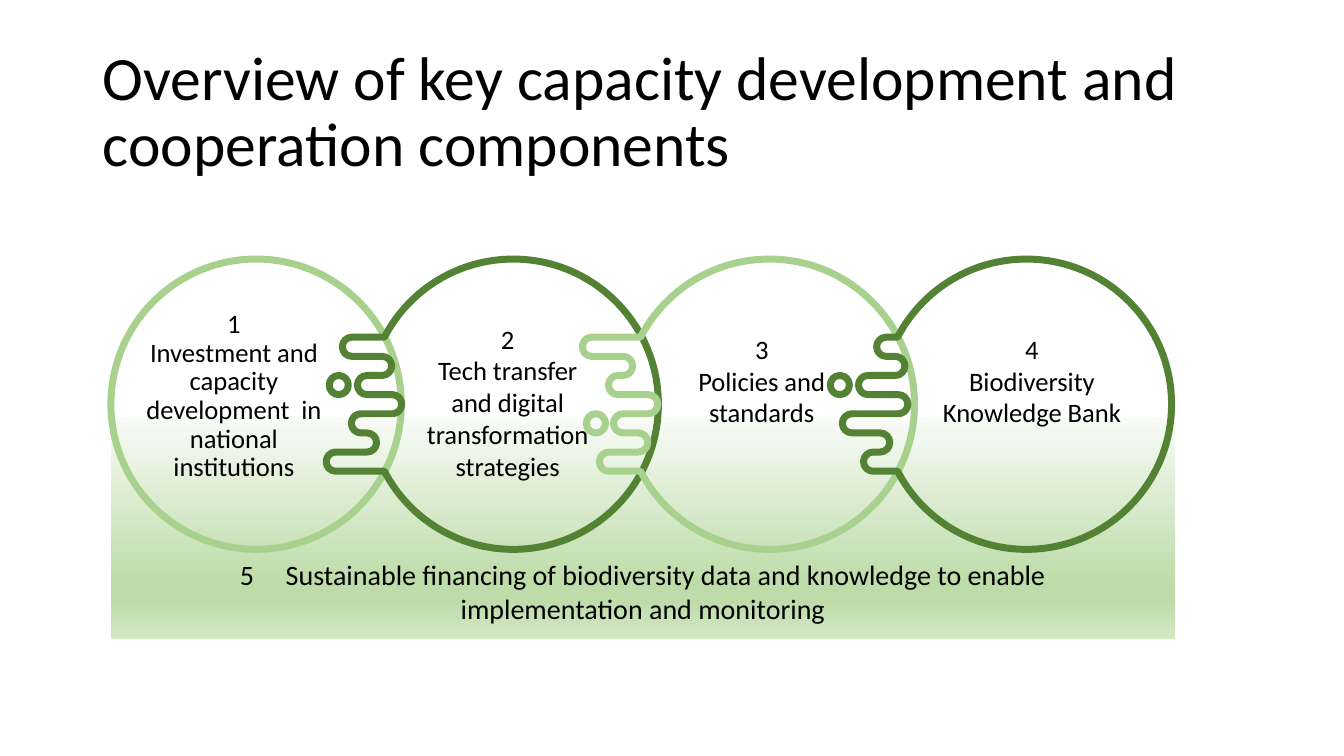
import math

import lxml.etree
import pptx
import pptx.dml.color
import pptx.enum.shapes
import pptx.enum.text
import pptx.oxml
import pptx.oxml.ns
import pptx.util

Inches = pptx.util.Inches
qn = pptx.oxml.ns.qn
Shapes = pptx.enum.shapes.MSO_SHAPE
Align = pptx.enum.text.PP_ALIGN
Anchor = pptx.enum.text.MSO_ANCHOR

# Content
TITLE = "Overview of key capacity development and cooperation components"
FINANCING = {
    "number": "5",
    "lines": ["Sustainable financing of biodiversity data and knowledge to enable",
              "implementation and monitoring"],
}
LABELS = [
    {"box": (1.06, 3.03, 2.52, 1.43), "line_spacing": 0.9,
     "lines": ["1", "Investment and capacity development  in national", "institutions"]},
    {"box": (4.09, 3.15, 1.89, 1.49), "line_spacing": 1.0,
     "lines": ["2", "Tech transfer and digital transformation strategies"]},
    {"box": (6.61, 3.25, 1.89, 1.34), "line_spacing": 1.0,
     "lines": ["3", "Policies and standards"]},
    {"box": (9.10, 3.25, 2.27, 1.25), "line_spacing": 1.0,
     "lines": ["4", "Biodiversity Knowledge Bank"]},
]
# Turns are the x positions of the bends, upwards, left and right in turn
LINKS = [
    {"center": 5.09, "color": "dark", "bead": (3.36, 3.82),
     "turns": [3.33, 3.64, 3.58, 3.89, 3.64, 3.79, 3.49]},
    {"center": 7.63, "color": "light", "bead": (5.91, 4.20),
     "turns": [6.04, 6.33, 6.18, 6.43, 6.13, 6.18, 5.87]},
    {"center": 10.18, "color": "dark", "bead": (8.33, 3.82),
     "turns": [8.66, 8.73, 8.45, 8.91, 8.61, 8.88, 8.79]},
]

# Style
COLORS = {"light": "A9D18E", "dark": "548235", "text": "000000"}
BAND_STOPS = [(0, "F8FBF6"), (74, "BEDCAA"), (83, "BEDCAA"), (100, "D4E8C6")]
FONT = "Calibri"
RADIUS = 1.44
MIDDLE = 4.01
PITCH = 0.19
LINE_WIDTH = 5


def rgb(name):
    return pptx.dml.color.RGBColor.from_string(COLORS[name])


def format_font(font, size):
    values = {"name": FONT, "size": pptx.util.Pt(size), "bold": False}
    for name, value in values.items():
        setattr(font, name, value)
    font.color.rgb = rgb("text")


def format_outline(shape, color):
    shape.shadow.inherit = False
    shape.fill.background()
    shape.line.color.rgb = rgb(color)
    shape.line.width = pptx.util.Pt(LINE_WIDTH)


def arc(center, radius, *angles):
    """Cubic curves through the angles (radians): two handles and an end each."""
    points = []
    for start, end in zip(angles, angles[1:]):
        handle = 4 / 3 * math.tan((end - start) / 4)
        for angle, offset in ((start, handle), (end, -handle), (end, 0)):
            points.append((
                center[0] + radius * (math.cos(angle) - offset * math.sin(angle)),
                center[1] + radius * (math.sin(angle) + offset * math.cos(angle))))
    return points


def link_curves(link):
    """From the right side round the bottom, up the winding edge, over the top."""
    quarter = math.pi / 2
    half_height = len(link["turns"]) * PITCH / 2
    joint = math.pi - math.asin(half_height / RADIUS)
    center = (link["center"], MIDDLE)
    points = arc(center, RADIUS, 0, quarter, joint)
    for row, turn in enumerate(link["turns"]):
        row_y = MIDDLE + half_height - (row + 0.5) * PITCH
        side = math.pi if row % 2 == 0 else 0
        points += [(turn, row_y + PITCH / 2)] * 3
        points += arc((turn, row_y), PITCH / 2, quarter, side, 2 * side - quarter)
    top = arc(center, RADIUS, -joint, -quarter, 0)
    top_joint = (link["center"] + RADIUS * math.cos(joint), MIDDLE - half_height)
    return points + [top_joint] * 3 + top


def add_curved_shape(contours):
    """Each contour is a start point and its cubic curves, in inches."""
    builder = None
    for start, points in contours:
        start = tuple(map(Inches, start))
        if builder is None:
            builder = shapes.build_freeform(*start)
        else:
            builder.move_to(*start)
        builder.add_line_segments([tuple(map(Inches, point)) for point in points], close=True)
    shape = builder.convert_to_shape()
    segments = list(shape.element.iter(qn("a:lnTo")))
    for index in range(0, len(segments), 3):
        curve = lxml.etree.Element(qn("a:cubicBezTo"))
        segments[index].addprevious(curve)
        for segment in segments[index:index + 3]:
            curve.append(segment[0])
            segment.getparent().remove(segment)
    return shape


presentation = pptx.Presentation()
presentation.slide_width = Inches(13.33)
presentation.slide_height = Inches(7.5)
slide = presentation.slides.add_slide(presentation.slide_layouts[5])
shapes = slide.shapes

# Title
title = shapes.title
title.left, title.top, title.width, title.height = map(Inches, (0.92, 0.4, 11.5, 1.45))
title.text_frame.text = TITLE
title.text_frame.vertical_anchor = Anchor.MIDDLE
title.text_frame.auto_size = pptx.enum.text.MSO_AUTO_SIZE.NONE
paragraph = title.text_frame.paragraphs[0]
paragraph.alignment = Align.LEFT
paragraph.line_spacing = 0.9
format_font(paragraph.font, 44)

# Financing band with a vertical gradient
band = shapes.add_shape(Shapes.RECTANGLE, *map(Inches, (1.1, 4.15, 10.55, 2.19)))
band.shadow.inherit = False
band.line.fill.background()
stops = "".join(f'<a:gs pos="{position * 1000}"><a:srgbClr val="{color}"/></a:gs>'
                for position, color in BAND_STOPS)
gradient = pptx.oxml.parse_xml(
    f'<a:gradFill {pptx.oxml.ns.nsdecls("a")} rotWithShape="1"><a:gsLst>{stops}</a:gsLst>'
    '<a:lin ang="5400000" scaled="0"/></a:gradFill>')
band.element.spPr.find(qn("a:prstGeom")).addnext(gradient)

frame = band.text_frame
frame.word_wrap = True
frame.vertical_anchor = Anchor.BOTTOM
frame.margin_bottom = Inches(0.14)
paragraph = frame.paragraphs[0]
paragraph.alignment = Align.CENTER
for text in (FINANCING["number"], " ", FINANCING["lines"][0]):
    run = paragraph.add_run()
    run.text = text
    format_font(run.font, 20)
    if text == " ":  # one widened space sets the number apart
        run.font._element.set("spc", "1800")
paragraph.add_line_break()
run = paragraph.add_run()
run.text = FINANCING["lines"][1]
format_font(run.font, 20)

# First ring
ring = shapes.add_shape(Shapes.OVAL, *map(Inches, (1.1, MIDDLE - RADIUS, 2 * RADIUS, 2 * RADIUS)))
format_outline(ring, "light")

# Interlocking links, each with a bead
for link in LINKS:
    bead = arc(link["bead"], PITCH / 2, *(step * math.pi / 2 for step in range(5)))
    outline = link_curves(link)
    shape = add_curved_shape([(bead[-1], bead), (outline[-1], outline)])
    format_outline(shape, link["color"])
    lxml.etree.SubElement(shape.line._get_or_add_ln(), qn("a:round"))

# Labels
for label in LABELS:
    frame = shapes.add_textbox(*map(Inches, label["box"])).text_frame
    frame.word_wrap = True
    for index, line in enumerate(label["lines"]):
        paragraph = frame.paragraphs[0] if index == 0 else frame.add_paragraph()
        paragraph.text = line
        paragraph.alignment = Align.CENTER
        paragraph.line_spacing = label["line_spacing"]
        format_font(paragraph.font, 19)

presentation.save("out.pptx")
